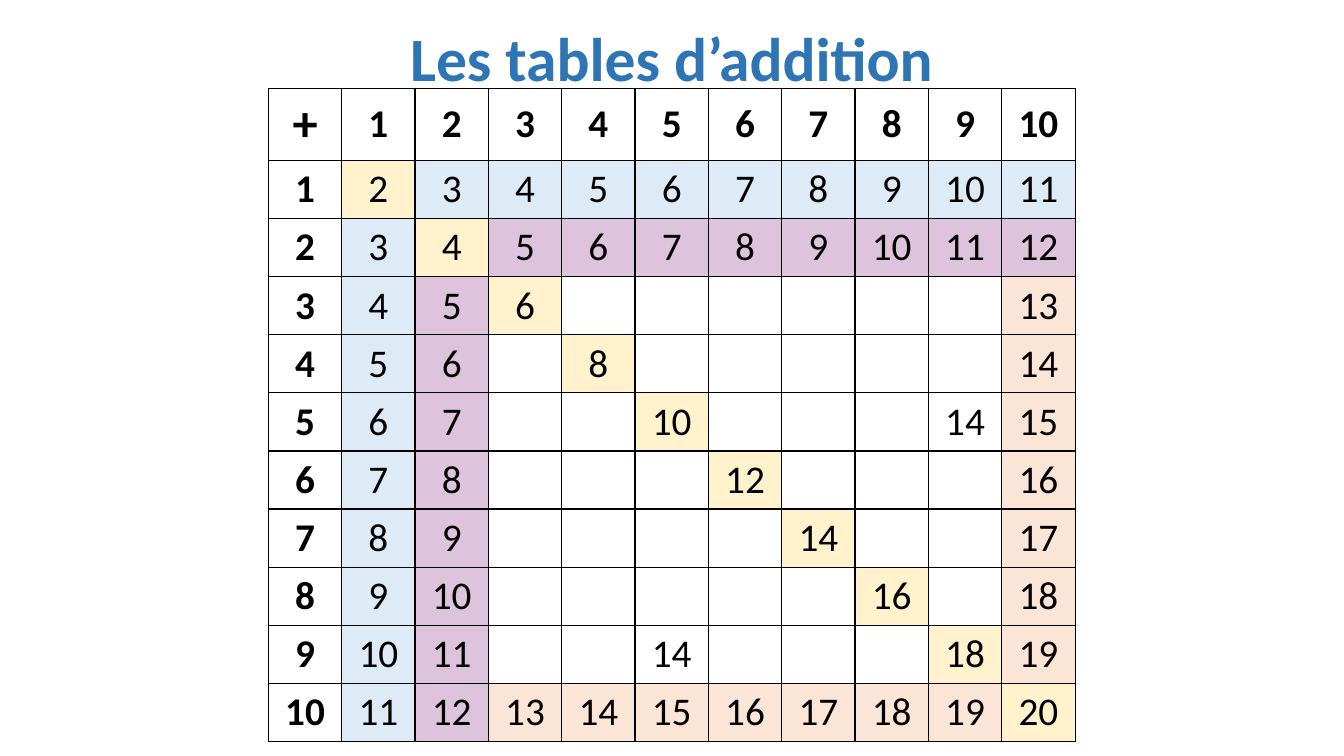
from lxml import etree
from pptx import Presentation
from pptx.dml.color import RGBColor as RGB
from pptx.enum.text import MSO_ANCHOR as ANCHOR, PP_ALIGN as ALIGN
from pptx.oxml.ns import qn
from pptx.util import Pt

COLORS = {
    "title": "2E75B6", "ink": "000000", "header": "FFFFFF", "double": "FFF2CC",
    "plus_1": "DEEBF7", "plus_2": "DEC3DC", "plus_10": "FBE5D6",
}
LAST = 10
EXTRA_SUMS = {(5, 9), (9, 5)}


def write(frame, text, size=28, bold=False, color="ink"):
    """Put centred text in a text frame."""
    paragraph = frame.paragraphs[0]
    paragraph.alignment = ALIGN.CENTER
    run = paragraph.add_run()
    run.text = text
    run.font.name = "Calibri"
    run.font.size = Pt(size)
    run.font.bold = bold
    run.font.color.rgb = RGB.from_string(COLORS[color])
    return paragraph


def add_borders(cell):
    properties = cell._tc.get_or_add_tcPr()
    for position, side in enumerate(("lnL", "lnR", "lnT", "lnB")):
        line = etree.Element(qn(f"a:{side}"), w=str(Pt(1)))
        fill = etree.SubElement(line, qn("a:solidFill"))
        etree.SubElement(fill, qn("a:srgbClr"), val=COLORS["ink"])
        properties.insert(position, line)


prs = Presentation()
prs.slide_width, prs.slide_height = Pt(960), Pt(540)
slide = prs.slides.add_slide(prs.slide_layouts[5])

title = slide.shapes.title
title.left, title.top, title.width, title.height = Pt(66), Pt(-8), Pt(828), Pt(104.4)
title.text_frame.vertical_anchor = ANCHOR.MIDDLE
heading = write(title.text_frame, "Les tables d’addition", size=44, bold=True, color="title")
heading.line_spacing = 0.9

column_width, header_height, row_height = 52.4, 51.4, 41.5
sums = slide.shapes.add_table(
    LAST + 1, LAST + 1, Pt(191.7), Pt(63.2),
    Pt(column_width * (LAST + 1)), Pt(header_height + row_height * LAST)).table
sums.first_row = sums.horz_banding = False
for column in sums.columns:
    column.width = Pt(column_width)
for number, row in enumerate(sums.rows):
    row.height = Pt(row_height if number else header_height)

for a in range(LAST + 1):
    for b in range(LAST + 1):
        is_header = a == 0 or b == 0
        if is_header:
            shade = "header"
        elif a == b:
            shade = "double"
        elif min(a, b) <= 2:
            shade = f"plus_{min(a, b)}"
        elif max(a, b) == LAST:
            shade = "plus_10"
        else:
            shade = None

        cell = sums.cell(a, b)
        cell.vertical_anchor = ANCHOR.MIDDLE
        cell.margin_top = cell.margin_bottom = 0
        if shade:
            cell.fill.solid()
            cell.fill.fore_color.rgb = RGB.from_string(COLORS[shade])
        else:
            cell.fill.background()
        if shade or (a, b) in EXTRA_SUMS:
            is_corner = a == b == 0
            write(cell.text_frame, "+" if is_corner else str(a + b),
                  size=36 if is_corner else 28, bold=is_header)
        add_borders(cell)

prs.save("out.pptx")
